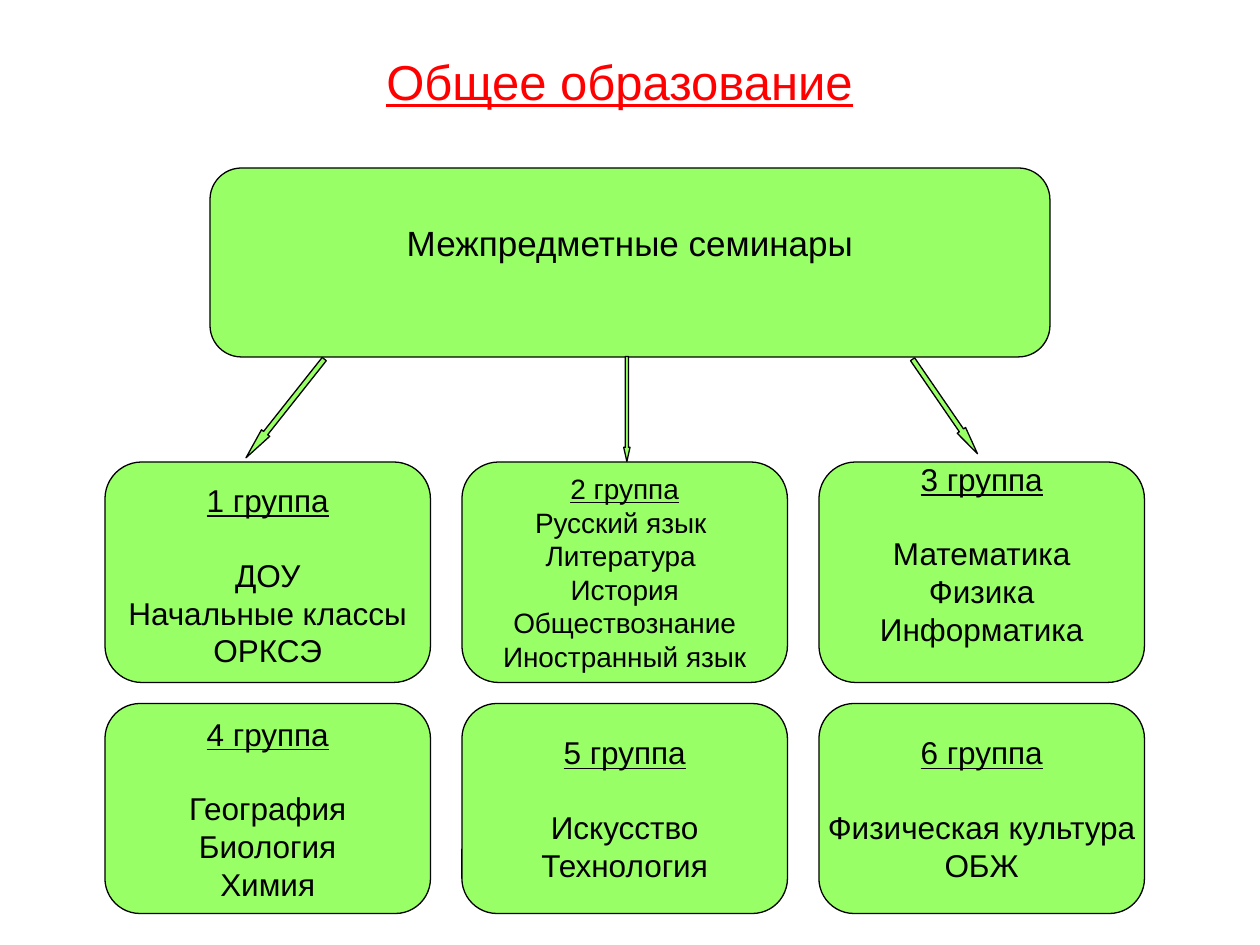
from pptx import Presentation
from pptx.dml.color import RGBColor
from pptx.enum import shapes, text
from pptx.util import Pt

GREEN = RGBColor(0x99, 0xFF, 0x66)
BLACK = RGBColor(0, 0, 0)
RED = RGBColor(0xFF, 0, 0)
FONT = "Arial"

# Content
TITLE = "Общее образование"
SEMINARS = "Межпредметные семинары"
# heading, subjects, text size, gap under heading, extra top and bottom insets
GROUPS = [
    ("1 группа", ["ДОУ", "Начальные классы", "ОРКСЭ"], 18, 21, 3.5, 0),
    ("2 группа", ["Русский язык ", "Литература ", "История",
                  "Обществознание", "Иностранный язык"], 16, 0, 0, 0),
    ("3 группа", ["Математика", "Физика", "Информатика"], 18, 21, 0, 21),
    ("4 группа", ["География", "Биология", "Химия"], 18, 21, 0, 0),
    ("5 группа", ["Искусство", "Технология"], 18, 21, 0, 0),
    ("6 группа", ["Физическая культура", "ОБЖ"], 18, 21, 0, 0),
]
# centre x, centre y, length, thickness, rotation, head length ratio
ARROWS = [
    (358.2, 233.7, 60, 3.6, 90, 2.24),
    (162.9, 233.4, 72, 6, 128.4, 3),
    (540, 232.3, 65.5, 5.8, 55.5, 2.79),
]

# Grid of groups
COLUMNS = 3
LEFT, COLUMN_STEP, GROUP_WIDTH = 60, 204, 186
ROWS = [(264, 126), (402, 120)]  # top, height
INSET = 3.6


def add_green_shape(page, kind, left, top, width, height):
    shape = page.shapes.add_shape(kind, Pt(left), Pt(top), Pt(width), Pt(height))
    shape.shadow.inherit = False
    shape.fill.solid()
    shape.fill.fore_color.rgb = GREEN
    shape.line.color.rgb = BLACK
    shape.line.width = Pt(0.75)
    return shape


def format_para(para, size, color, underline=False):
    para.alignment = text.PP_ALIGN.CENTER
    for span in para.runs:
        span.font.name = FONT
        span.font.size = Pt(size)
        span.font.color.rgb = color
        span.font.underline = underline


def add_box(page, place, lines, size, extra_top=0, extra_bottom=0):
    box = add_green_shape(page, shapes.MSO_SHAPE.ROUNDED_RECTANGLE, *place)
    box.adjustments[0] = 0.167
    frame = box.text_frame
    frame.word_wrap = False
    frame.vertical_anchor = text.MSO_ANCHOR.MIDDLE
    frame.margin_top = Pt(INSET + extra_top)
    frame.margin_bottom = Pt(INSET + extra_bottom)
    frame.text = "\n".join(lines)
    for para in frame.paragraphs:
        format_para(para, size, BLACK)
    return frame.paragraphs[0]


def main():
    deck = Presentation()
    deck.slide_width, deck.slide_height = Pt(720), Pt(540)
    page = deck.slides.add_slide(deck.slide_layouts[5])

    # Title
    title = page.shapes.title
    title.left, title.top, title.width, title.height = Pt(30), Pt(18), Pt(648), Pt(56)
    title.text_frame.text = TITLE
    title.text_frame.vertical_anchor = text.MSO_ANCHOR.MIDDLE
    format_para(title.text_frame.paragraphs[0], 28, RED, underline=True)

    # Seminars, set one line above the middle
    add_box(page, (120, 96, 480, 108), [SEMINARS], 20, extra_bottom=23)

    # Arrows
    for x, y, length, thickness, rotation, head in ARROWS:
        arrow = add_green_shape(page, shapes.MSO_SHAPE.RIGHT_ARROW, x - length / 2,
                                y - thickness / 2, length, thickness)
        arrow.rotation = rotation
        arrow.adjustments[1] = head

    # Groups
    for index, (name, subjects, size, gap, above, below) in enumerate(GROUPS):
        row, column = divmod(index, COLUMNS)
        top, height = ROWS[row]
        place = (LEFT + column * COLUMN_STEP, top, GROUP_WIDTH, height)
        heading = add_box(page, place, [name, *subjects], size, above, below)
        heading.space_after = Pt(gap)
        heading.runs[0].font.underline = True

    deck.save("out.pptx")


if __name__ == "__main__":
    main()
